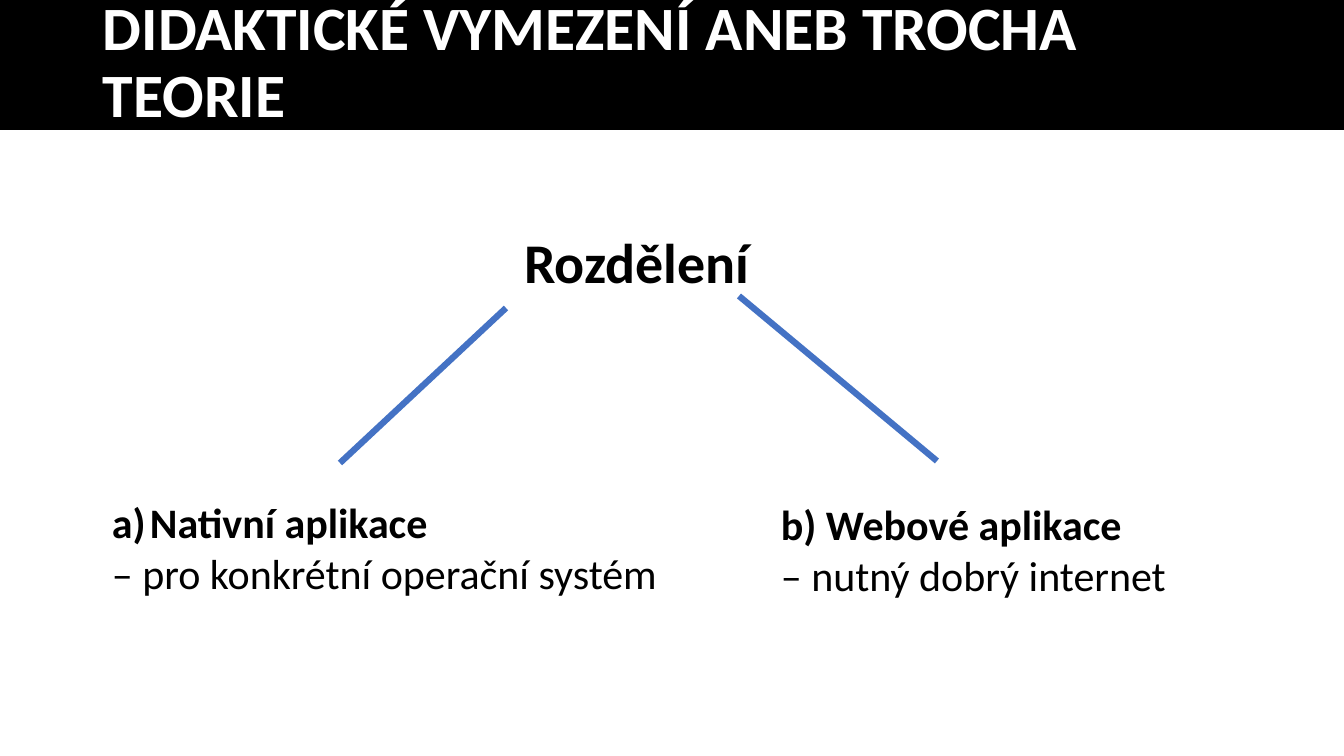
import pptx
import pptx.dml.color
import pptx.enum.shapes
import pptx.enum.text
import pptx.oxml.ns
import pptx.util
from lxml import etree

EMU_PER_PX = 914400 / 100.8
FONT = "Calibri"
COLORS = {"band": "000000", "title": "FFFFFF", "text": "000000", "branch": "4472C4"}


def px(length):
    return pptx.util.Emu(round(length * EMU_PER_PX))


def rgb(name):
    return pptx.dml.color.RGBColor.from_string(COLORS[name])


def add_band(slide, left, top, width, height):
    band = slide.shapes.add_shape(
        pptx.enum.shapes.MSO_SHAPE.RECTANGLE, px(left), px(top), px(width), px(height))
    band.shadow.inherit = False
    band.fill.solid()
    band.fill.fore_color.rgb = rgb("band")
    band.line.color.rgb = rgb("band")
    band.line.width = pptx.util.Pt(1)


def add_text(slide, box, lines, size, color="text", frame_format=None, line_format=None):
    """Write (text, bold) lines into a wrapping text box and return its paragraphs."""
    frame = slide.shapes.add_textbox(*map(px, box)).text_frame
    for name, value in {"word_wrap": True, **(frame_format or {})}.items():
        setattr(frame, name, value)
    for index, (text, bold) in enumerate(lines):
        paragraph = frame.paragraphs[0] if index == 0 else frame.add_paragraph()
        for name, value in (line_format or {}).items():
            setattr(paragraph, name, value)
        run = paragraph.add_run()
        run.text = text
        font_format = {"name": FONT, "size": pptx.util.Pt(size), "bold": bold}
        for name, value in font_format.items():
            setattr(run.font, name, value)
        run.font.color.rgb = rgb(color)
    return frame.paragraphs


def add_letter_number(paragraph, indent):
    properties = paragraph._p.get_or_add_pPr()
    properties.set("marL", str(px(indent)))
    properties.set("indent", str(-px(indent)))
    etree.SubElement(properties, pptx.oxml.ns.qn("a:buFont"), typeface="+mj-lt")
    etree.SubElement(properties, pptx.oxml.ns.qn("a:buAutoNum"), type="alphaLcParenR")


def add_branch(slide, start, end):
    branch = slide.shapes.add_connector(
        pptx.enum.shapes.MSO_CONNECTOR.STRAIGHT, *map(px, start + end))
    branch.line.color.rgb = rgb("branch")
    branch.line.width = pptx.util.Pt(4.5)
    etree.SubElement(branch._element.spPr, pptx.oxml.ns.qn("a:effectLst"))


def main():
    presentation = pptx.Presentation()
    presentation.slide_width, presentation.slide_height = px(1344), px(756)
    slide = presentation.slides.add_slide(presentation.slide_layouts[6])

    # Title band
    add_band(slide, 0, 0, 1344, 129)
    add_text(slide, (93, -9, 1159, 146),
             [("DIDAKTICKÉ VYMEZENÍ ANEB TROCHA TEORIE", True)], 44, "title",
             {"vertical_anchor": pptx.enum.text.MSO_ANCHOR.MIDDLE},
             {"line_spacing": 0.9})

    # Root of the division
    add_text(slide, (507, 223, 260, 78), [("Rozdělení", True)], 40,
             line_format={"alignment": pptx.enum.text.PP_ALIGN.CENTER})

    # Two kinds of application
    native = add_text(slide, (102, 492, 660, 112),
                      [("Nativní aplikace", True),
                       ("– pro konkrétní operační systém", False)], 30)
    add_letter_number(native[0], 38)
    add_text(slide, (771, 494, 560, 112),
             [("b) Webové aplikace", True), ("– nutný dobrý internet", False)], 30)

    # Branches
    add_branch(slide, (937, 461), (739, 296))
    add_branch(slide, (506, 308), (340, 463))

    presentation.save("out.pptx")


if __name__ == "__main__":
    main()
